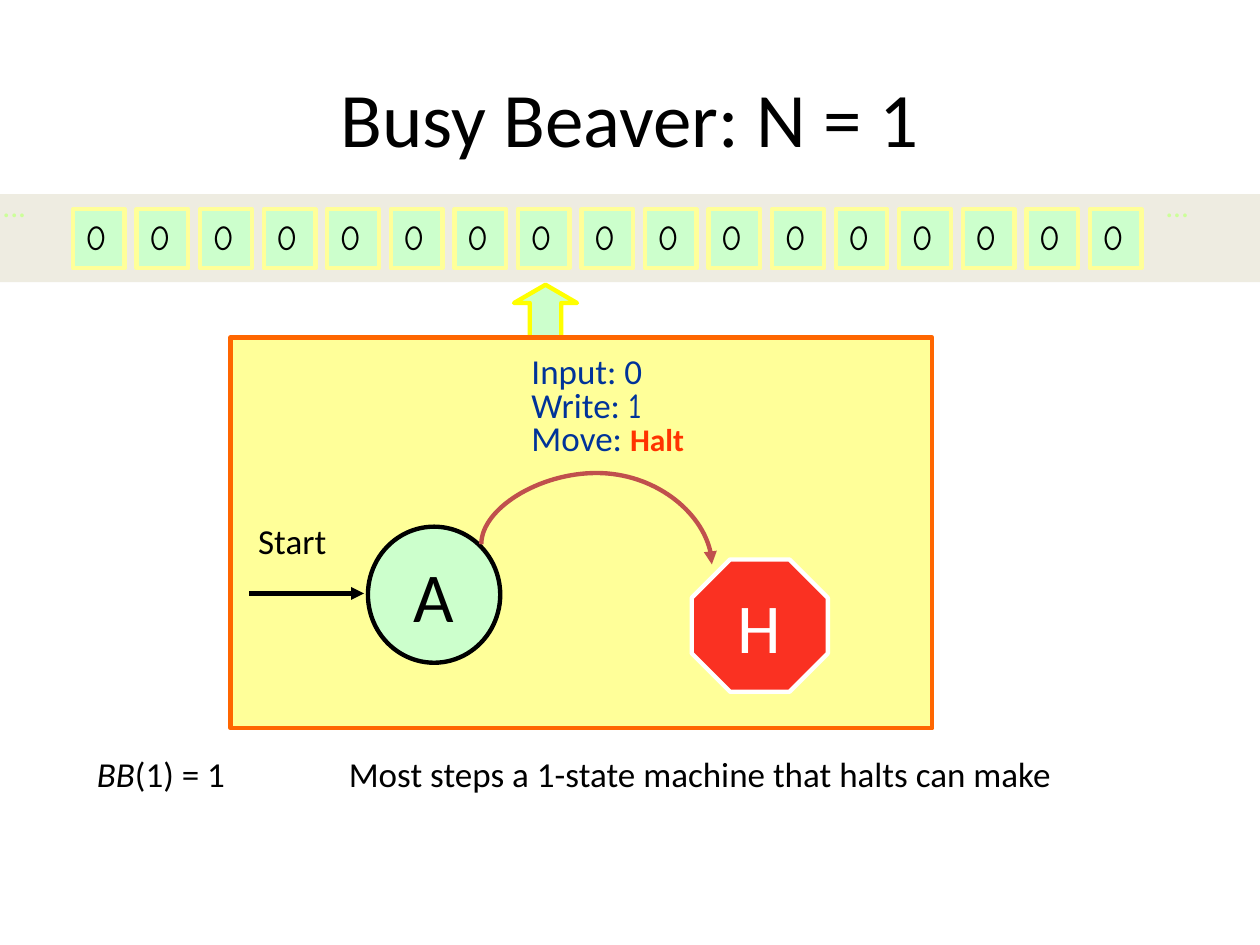
import pptx
import pptx.util
import pptx.dml.color
import pptx.enum.dml
import pptx.enum.shapes
import pptx.enum.text
import pptx.oxml
import pptx.oxml.ns
import lxml.etree

Inches = pptx.util.Inches
Pt = pptx.util.Pt
Shape = pptx.enum.shapes.MSO_SHAPE
Connector = pptx.enum.shapes.MSO_CONNECTOR
Align = pptx.enum.text.PP_ALIGN
Anchor = pptx.enum.text.MSO_ANCHOR
AutoSize = pptx.enum.text.MSO_AUTO_SIZE
qn = pptx.oxml.ns.qn

COLORS = {
    "black": "000000",
    "white": "FFFFFF",
    "band": "EEECE1",
    "mint": "CCFFCC",
    "lime": "CCFF99",
    "cream": "FFFF99",
    "yellow": "FFFF00",
    "orange": "FF6600",
    "navy": "003399",
    "halt": "FF3300",
    "stop": "FA3122",
    "brick": "C0504D",
}


def color(name):
    return pptx.dml.color.RGBColor.from_string(COLORS[name])


def write(frame, lines, size=20, font="Calibri", ink="black", align=Align.LEFT,
          anchor=Anchor.TOP, wrap=False, grow=True, spacing=None):
    frame.word_wrap = wrap
    frame.vertical_anchor = anchor
    frame.auto_size = AutoSize.SHAPE_TO_FIT_TEXT if grow else AutoSize.NONE
    for index, line in enumerate(lines):
        para = frame.paragraphs[0] if index == 0 else frame.add_paragraph()
        para.alignment = align
        para.line_spacing = spacing
        for text, change in line:
            span = para.add_run()
            span.text = text
            span.font.name = change.get("font", font)
            span.font.size = Pt(change.get("size", size))
            span.font.bold = change.get("bold", False)
            span.font.italic = change.get("italic", False)
            span.font.color.rgb = color(change.get("ink", ink))


class SlideBuilder:
    line_width = Pt(2.5)

    def __init__(self, page):
        self.page = page

    def title(self, text, left, top, width, height):
        box = self.page.shapes.title
        box.left, box.top = Inches(left), Inches(top)
        box.width, box.height = Inches(width), Inches(height)
        write(box.text_frame, [[(text, {})]], size=44, align=Align.CENTER,
              anchor=Anchor.MIDDLE, wrap=True, grow=False)

    def shape(self, kind, left, top, width, height, fill, line=None,
              adjustments=(), text=None, **style):
        shape = self.page.shapes.add_shape(
            kind, Inches(left), Inches(top), Inches(width), Inches(height))
        shape.shadow.inherit = False
        shape.fill.solid()
        shape.fill.fore_color.rgb = color(fill)
        if line:
            shape.line.color.rgb = color(line)
            shape.line.width = self.line_width
        else:
            shape.line.fill.background()
        for index, value in enumerate(adjustments):
            shape.adjustments[index] = value
        if text:
            write(shape.text_frame, [[(text, {})]], **style)

    def state(self, kind, left, top, width, height, fill, line, text, ink,
              adjustments=()):
        self.shape(kind, left, top, width, height, fill, line, adjustments,
                   text, size=40, ink=ink, align=Align.CENTER,
                   anchor=Anchor.MIDDLE, wrap=True)

    def label(self, lines, left, top, width, height, **style):
        box = self.page.shapes.add_textbox(
            Inches(left), Inches(top), Inches(width), Inches(height))
        write(box.text_frame, lines, **style)
        return box

    def arrow(self, kind, start, end, ink):
        arrow = self.page.shapes.add_connector(
            kind, *(Inches(value) for value in start + end))
        arrow.line.color.rgb = color(ink)
        arrow.line.width = self.line_width
        line = arrow.line._get_or_add_ln()
        lxml.etree.SubElement(line, qn("a:tailEnd"), type="triangle")
        lxml.etree.SubElement(arrow._element.spPr, qn("a:effectLst"))
        return arrow

    def arc(self, start, end, ink, bend):
        (left, top), (right, bottom) = start, end
        middle_x, middle_y = (left + right) / 2, (top + bottom) / 2
        half_span, half_drop = (right - left) / 2, (bottom - top) / 2
        arrow = self.arrow(Connector.CURVE,
                           (middle_x - half_drop, middle_y + half_span),
                           (middle_x + half_drop, middle_y - half_span), ink)
        properties = arrow._element.spPr
        properties.find(qn("a:xfrm")).set("rot", "5400000")
        guides = properties.find(qn("a:prstGeom")).find(qn("a:avLst"))
        lxml.etree.SubElement(guides, qn("a:gd"), name="adj1",
                              fmla=f"val {round(bend * 100000)}")

    def tab_stop(self, box, position):
        properties = box.text_frame.paragraphs[0]._p.get_or_add_pPr()
        stops = lxml.etree.SubElement(properties, qn("a:tabLst"))
        lxml.etree.SubElement(stops, qn("a:tab"), pos=str(Inches(position)), algn="l")


def main():
    deck = pptx.Presentation()
    deck.slide_width, deck.slide_height = Inches(10), Inches(7.5)
    build = SlideBuilder(deck.slides.add_slide(deck.slide_layouts[5]))

    build.title("Busy Beaver: N = 1", 0.5, 0.3, 9, 1.25)
    build.shape(Shape.RECTANGLE, -0.01, 1.54, 10.01, 0.7, "band")
    build.shape(Shape.UP_ARROW, 4.08, 2.26, 0.5, 0.58, "mint", "yellow", (0.5, 0.29))
    build.shape(Shape.RECTANGLE, 1.83, 2.68, 5.57, 3.1, "cream", "orange")

    build.state(Shape.OVAL, 2.92, 4.18, 1.05, 1.08, "mint", "black", "A", "black")
    build.arrow(Connector.STRAIGHT, (1.98, 4.71), (2.89, 4.71), "black")
    build.label([[("Start", {})]], 1.95, 4.07, 0.89, 0.43)
    build.label([
        [("Input: 0", {})],
        [("Write: ", {}), ("1", {"font": "Comic Neue"})],
        [("Move: ", {}), ("Halt", {"size": 18, "ink": "halt", "bold": True})],
    ], 4.12, 2.79, 1.73, 0.9, ink="navy", spacing=0.8)

    cell_count, first_left, last_left = 17, 0.58, 8.65
    pitch = (last_left - first_left) / (cell_count - 1)
    for index in range(cell_count):
        build.shape(Shape.RECTANGLE, first_left + index * pitch, 1.66, 0.41, 0.47,
                    "mint", "cream", text="0", font="Comic Neue")
    for left in (-0.08, 9.15):
        build.label([[("...", {})]], left, 1.43, 0.69, 0.63, size=18, ink="lime")

    build.state(Shape.OCTAGON, 5.49, 4.44, 1.08, 1.05, "stop", "white", "H", "white",
                (0.29,))
    build.arc((3.82, 4.32), (5.65, 4.48), "brick", -3.54)

    result = build.label([[
        ("BB", {"italic": True}),
        ("(1) = 1\tMost steps a 1-state machine that halts can make", {}),
    ]], 0.67, 5.92, 8.17, 0.44, wrap=True)
    build.tab_stop(result, 2)

    deck.save("out.pptx")


if __name__ == "__main__":
    main()
